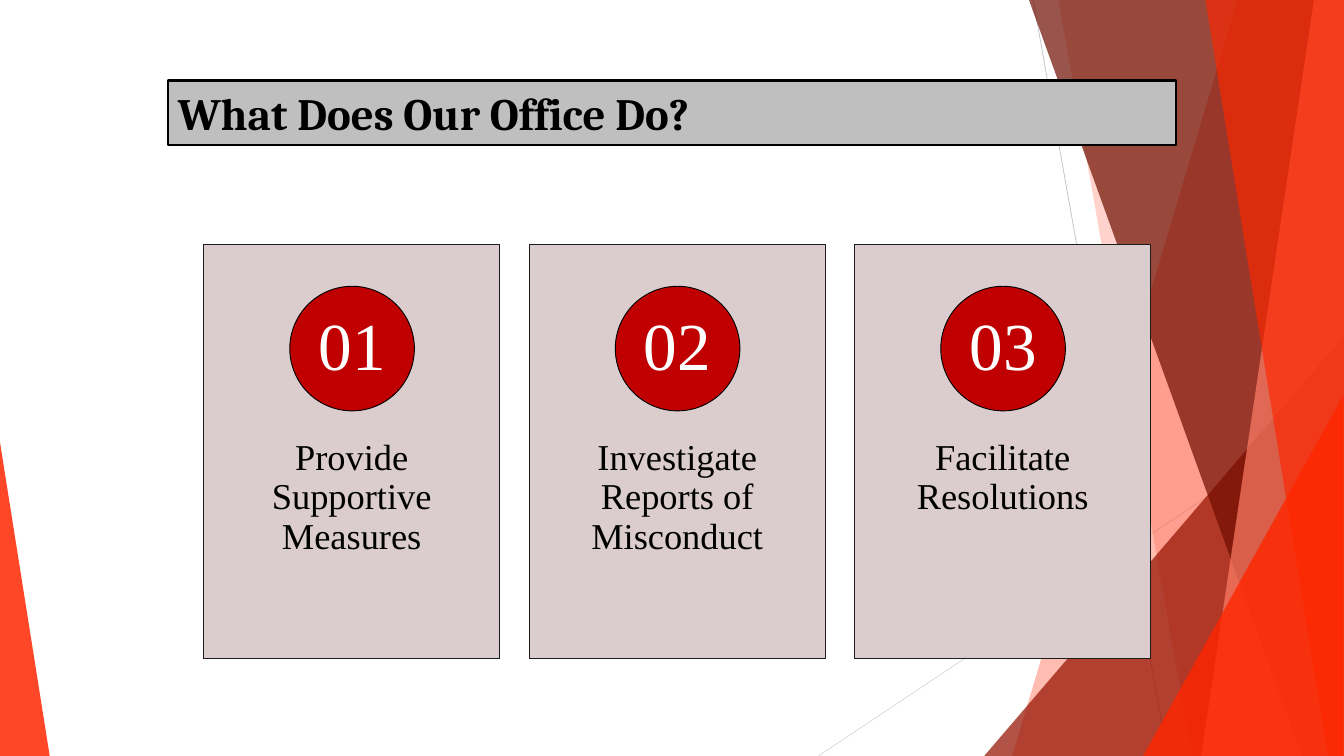
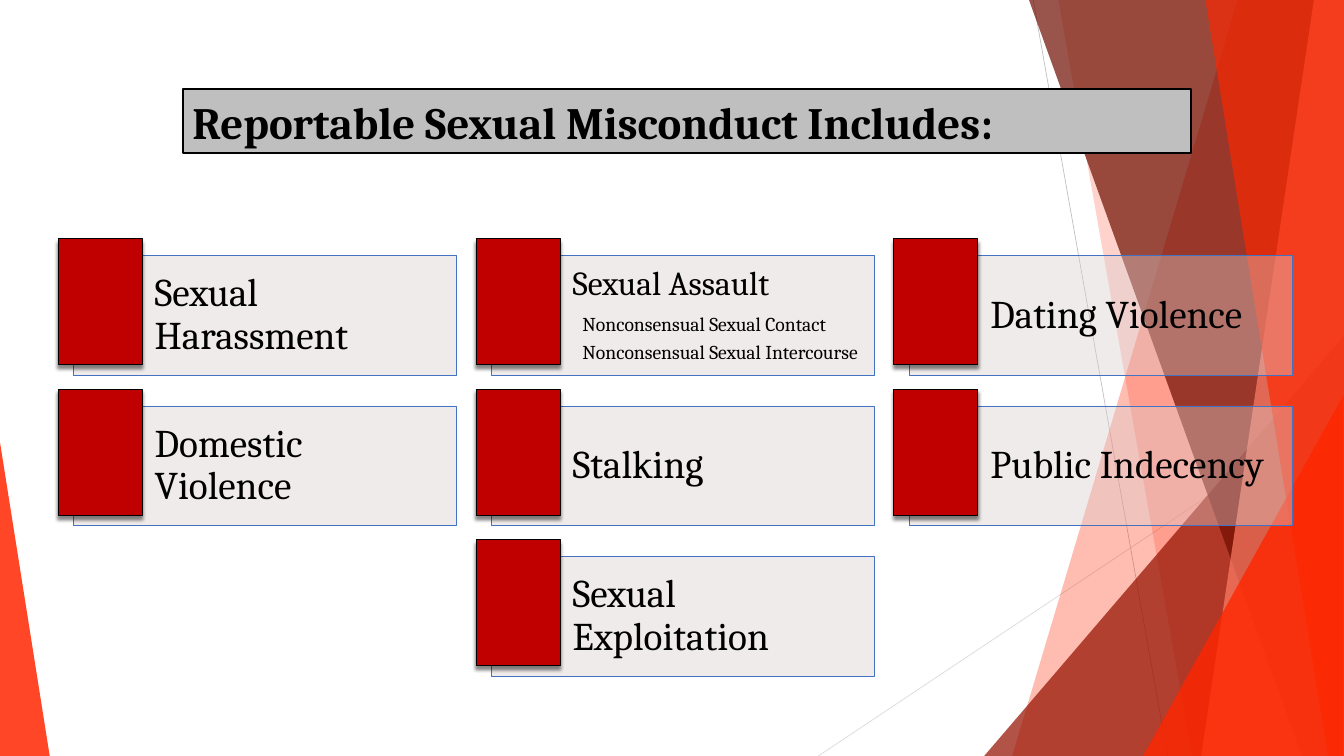
from dataclasses import dataclass
from typing import Any, NamedTuple, Optional

import pptx
import pptx.dml.color
import pptx.enum.shapes
import pptx.enum.text
import pptx.oxml
import pptx.oxml.ns
import pptx.oxml.xmlchemy
import pptx.shapes.autoshape
import pptx.shapes.shapetree
import pptx.slide
import pptx.text.text
import pptx.util

PX = 9525  # EMU per px, 96 px to the inch
WIDTH, HEIGHT = 1920, 1080

MSO = pptx.enum.shapes.MSO_SHAPE
ALIGN = pptx.enum.text.PP_ALIGN
ANCHOR = pptx.enum.text.MSO_ANCHOR
AUTO_SIZE = pptx.enum.text.MSO_AUTO_SIZE
qn = pptx.oxml.ns.qn


@dataclass(frozen=True)
class Theme:
    serif: str = "Cambria"
    roman: str = "Times New Roman"
    black: str = "000000"
    white: str = "FFFFFF"
    charcoal: str = "1C1C1C"
    silver: str = "BFBFBF"
    pale_silver: str = "D9D9D9"
    scarlet: str = "FF2600"
    coral: str = "FF7D66"
    brick: str = "941100"
    maroon: str = "6F0D00"
    crimson: str = "C00000"
    blush: str = "DBCDCE"
    blue: str = "4372C3"
    title_size: int = 48
    number_size: int = 72
    card_size: int = 39
    panel_size: int = 42
    detailed_size: int = 36
    detail_size: int = 21


T = Theme()


class Rect(NamedTuple):
    x: int
    y: int
    w: int
    h: int


class Style(NamedTuple):
    fill: str
    line: Optional[str] = None
    width: float = 1
    alpha: int = 100


class Text(NamedTuple):
    text: str
    font: str
    size: int
    color: str = T.black
    align: Any = ALIGN.LEFT
    before: float = 0
    indent: int = 0
    bold: bool = False
    spacing: float = 0.9


class Ray(NamedTuple):
    """A band to the right edge, bounded on the left by a slanted side."""
    top_x: int
    bottom_x: int
    style: Style


class Wedge(NamedTuple):
    rect: Rect
    apex: int
    style: Style


class Line(NamedTuple):
    x1: int
    y1: int
    x2: int
    y2: int
    color: str


class Panel(NamedTuple):
    heading: str
    details: tuple[str, ...] = ()


LINES = [Line(1476, 0, 1668, HEIGHT, T.silver),
         Line(1919, 580, 1169, HEIGHT, T.pale_silver)]
BANDS = [
    Ray(1768, 1446, Style(T.scarlet, alpha=30)),
    Ray(1512, 1703, Style(T.scarlet, alpha=20)),
    Wedge(Rect(1406, 480, 514, 600), 1, Style(T.brick, alpha=72)),
    Ray(1470, 1860, Style(T.maroon, alpha=70)),
    Ray(1877, 1716, Style(T.coral, alpha=70)),
    Ray(1722, 1897, Style(T.scarlet, alpha=65)),
    Wedge(Rect(1633, 565, 286, 515), 1, Style(T.scarlet, alpha=80)),
    Wedge(Rect(0, 632, 71, 448), 0, Style(T.scarlet, alpha=85)),
]
TITLE = Style(T.silver, T.black, 2.25)
CARD = Style(T.blush, T.charcoal)
CARD_BASE = Style(T.brick, T.charcoal)
BADGE = Style(T.crimson, T.black)
PANEL = Style(T.blush, T.blue, 0.75, 40)

DUTIES = ["Provide Supportive Measures", "Investigate Reports of Misconduct",
          "Facilitate Resolutions"]
PANELS = [
    [Panel("Sexual Harassment"),
     Panel("Sexual Assault", ("Nonconsensual Sexual Contact",
                              "Nonconsensual Sexual Intercourse")),
     Panel("Dating Violence")],
    [Panel("Domestic Violence"), Panel("Stalking"), Panel("Public Indecency")],
    [Panel("Sexual Exploitation")],
]


def rgb(color: str) -> pptx.dml.color.RGBColor:
    return pptx.dml.color.RGBColor.from_string(color)


def apply(obj: Any, fmt: dict[str, Any]) -> None:
    for name, value in fmt.items():
        setattr(obj, name, value)


def emu(rect: Rect) -> list[int]:
    return [v * PX for v in rect]


def paint(sp: Any, style: Style) -> None:
    sp.fill.solid()
    sp.fill.fore_color.rgb = rgb(style.fill)
    if style.alpha < 100:
        color = sp.element.spPr.find(qn("a:solidFill"))[0]
        alpha = pptx.oxml.xmlchemy.OxmlElement("a:alpha")
        alpha.set("val", str(style.alpha * 1000))
        color.append(alpha)
    if style.line:
        sp.line.color.rgb = rgb(style.line)
        sp.line.width = pptx.util.Pt(style.width)
    else:
        sp.line.fill.background()


def add_box(shapes: Any, kind: Any, rect: Rect,
            style: Style) -> pptx.shapes.autoshape.Shape:
    sp = shapes.add_shape(kind, *emu(rect))
    sp.shadow.inherit = False
    paint(sp, style)
    return sp


def write(tf: pptx.text.text.TextFrame, texts: list[Text],
          insets: tuple[int, int, int, int], anchor: Any) -> None:
    """Fill a frame, one paragraph per text; insets run left, top, right, bottom."""
    sides = ("margin_left", "margin_top", "margin_right", "margin_bottom")
    apply(tf, {side: v * PX for side, v in zip(sides, insets)})
    apply(tf, {"word_wrap": True, "vertical_anchor": anchor})
    for i, t in enumerate(texts):
        p = tf.add_paragraph() if i else tf.paragraphs[0]
        apply(p, {"alignment": t.align, "line_spacing": t.spacing,
                  "space_before": pptx.util.Pt(t.before)})
        if t.indent:
            p._p.get_or_add_pPr().set("marL", str(t.indent * PX))
        r = p.add_run()
        r.text = t.text
        apply(r.font, {"name": t.font, "size": pptx.util.Pt(t.size), "bold": t.bold})
        r.font.color.rgb = rgb(t.color)


def add_text(shapes: Any, rect: Rect, texts: list[Text],
             insets: tuple[int, int, int, int], anchor: Any) -> None:
    write(shapes.add_textbox(*emu(rect)).text_frame, texts, insets, anchor)


def add_drop_shadow(sp: pptx.shapes.autoshape.Shape) -> None:
    effects = sp.element.spPr.find(qn("a:effectLst"))
    shadow = pptx.oxml.parse_xml(
        f'<a:outerShdw {pptx.oxml.ns.nsdecls("a")} blurRad="50800" dist="50800" '
        f'dir="5400000" rotWithShape="0"><a:srgbClr val="{T.black}">'
        '<a:alpha val="48000"/></a:srgbClr></a:outerShdw>')
    effects.append(shadow)


def add_backdrop(slide: pptx.slide.Slide) -> None:
    """Draw the slanted bands as one group and hand it to the slide's layout."""
    group = slide.shapes.add_group_shape()
    for line in LINES:
        c = group.shapes.add_connector(
            pptx.enum.shapes.MSO_CONNECTOR.STRAIGHT, *[v * PX for v in line[:4]])
        c.line.color.rgb = rgb(line.color)
        c.line.width = pptx.util.Pt(0.75)
        c.element.spPr.append(pptx.oxml.xmlchemy.OxmlElement("a:effectLst"))
    for band in BANDS:
        if isinstance(band, Wedge):
            sp = add_box(group.shapes, MSO.ISOSCELES_TRIANGLE, band.rect, band.style)
            sp.adjustments[0] = band.apex
        else:
            fb = group.shapes.build_freeform(band.top_x, 0, scale=PX)
            fb.add_line_segments([(WIDTH, 0), (WIDTH, HEIGHT), (band.bottom_x, HEIGHT)])
            sp = fb.convert_to_shape()
            sp.shadow.inherit = False
            paint(sp, band.style)
    for n, props in enumerate(group.element.iter(qn("p:cNvPr")), 100):
        props.set("id", str(n))
    slide.slide_layout.shapes.element.insert(2, group.element)


def add_title(slide: pptx.slide.Slide, text: str, x: int, y: int) -> None:
    sp = slide.shapes.title
    rect = Rect(x, y, 1440, 92)
    apply(sp, dict(zip(("left", "top", "width", "height"), emu(rect))))
    paint(sp, TITLE)
    title = Text(text, T.serif, T.title_size, bold=True, spacing=1.0)
    write(sp.text_frame, [title], (14, 7, 14, 7), ANCHOR.MIDDLE)
    sp.text_frame.auto_size = AUTO_SIZE.SHAPE_TO_FIT_TEXT


def add_card(shapes: pptx.shapes.shapetree.SlideShapes, number: int, duty: str) -> None:
    card = Rect(291 + 465 * (number - 1), 349, 423, 592)
    badge = Rect(card.x + 123, card.y + 60, 178, 178)
    label = Rect(badge.x + 26, badge.y + 26, 126, 126)
    add_box(shapes, MSO.RECTANGLE, card, CARD)
    add_box(shapes, MSO.OVAL, badge, BADGE)
    add_text(shapes, card._replace(y=575, h=355),
             [Text(duty, T.roman, T.card_size, align=ALIGN.CENTER)],
             (33, 52, 33, 52), ANCHOR.TOP)
    add_text(shapes, label,
             [Text(f"{number:02}", T.roman, T.number_size, T.white, ALIGN.CENTER)],
             (13, 2, 13, 2), ANCHOR.MIDDLE)
    add_box(shapes, MSO.RECTANGLE, card._replace(y=card.y + card.h, h=0), CARD_BASE)


def add_panel(shapes: pptx.shapes.shapetree.SlideShapes, panel: Panel,
              col: int, row: int) -> None:
    rect = Rect(105 + 597 * col, 365 + 215 * row, 547, 171)
    size = T.detailed_size if panel.details else T.panel_size
    texts = [Text(panel.heading, T.serif, size)]
    for detail, before in zip(panel.details, (12.6, 7.3)):
        texts.append(Text(detail, T.serif, T.detail_size, before=before, indent=14))
    add_box(shapes, MSO.RECTANGLE, rect, PANEL)
    add_text(shapes, rect, texts, (116, 16, 16, 16), ANCHOR.MIDDLE)
    marker = Rect(rect.x - 22, rect.y - 24, 120, 180)
    add_drop_shadow(add_box(shapes, MSO.RECTANGLE, marker, BADGE))


def main() -> None:
    prs = pptx.Presentation()
    apply(prs, {"slide_width": WIDTH * PX, "slide_height": HEIGHT * PX})
    title_only = prs.slide_layouts[5]

    office = prs.slides.add_slide(title_only)
    add_backdrop(office)
    add_title(office, "What Does Our Office Do?", 240, 115)
    for number, duty in enumerate(DUTIES, 1):
        add_card(office.shapes, number, duty)

    reportable = prs.slides.add_slide(title_only)
    add_title(reportable, "Reportable Sexual Misconduct Includes:", 261, 127)
    columns = len(PANELS[0])
    for row, panels in enumerate(PANELS):
        first = (columns - len(panels)) // 2
        for col, panel in enumerate(panels, first):
            add_panel(reportable.shapes, panel, col, row)

    prs.save("out.pptx")


if __name__ == "__main__":
    main()
